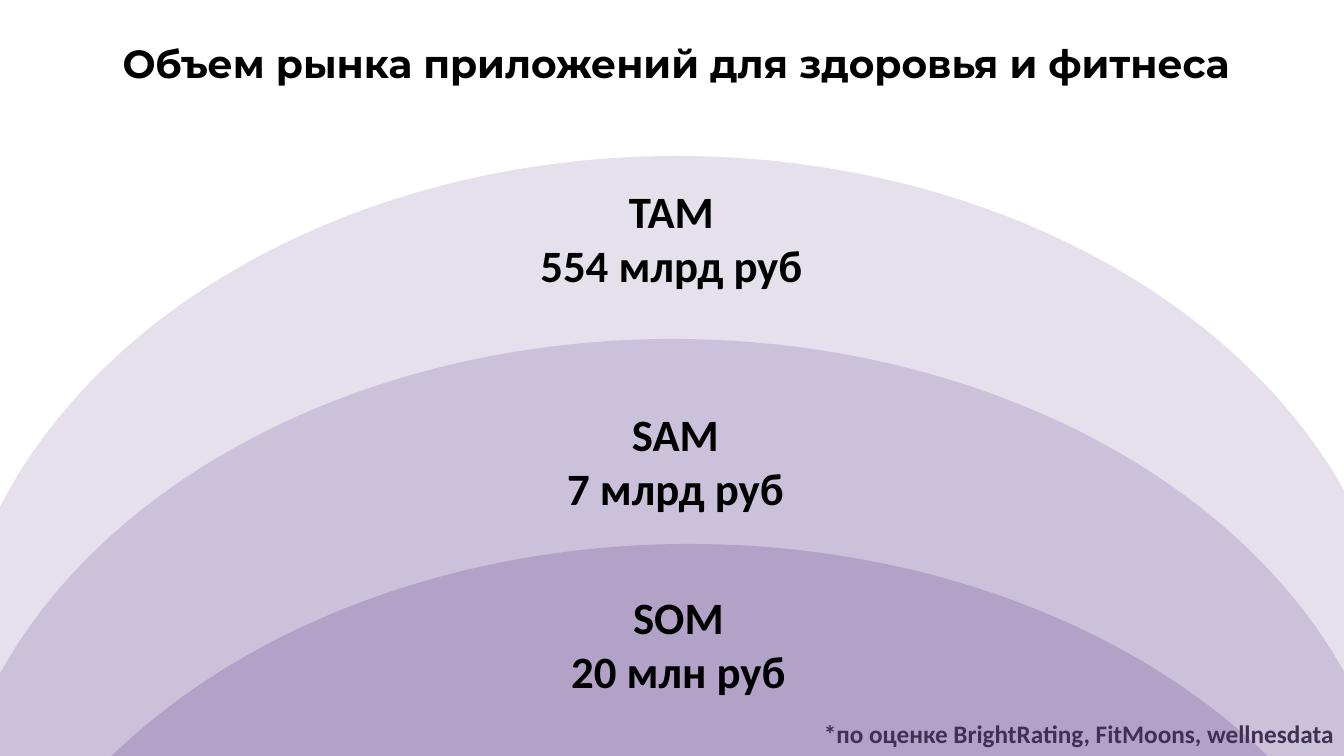
"""Build the TAM / SAM / SOM market size slide."""
from dataclasses import dataclass

from pptx import Presentation, util as u
from pptx.dml.color import RGBColor
from pptx.enum import shapes, text

SLIDE = (1344, 756)
TITLE = ("Объем рынка приложений для здоровья и фитнеса", (71, 0, 1210, 126))
NOTE = ("*по оценке BrightRating, FitMoons, wellnesdata", (814, 713, 555, 40))
MARKETS = [
    {"lines": ["TAM", "554 млрд руб"], "fill": "tam",
     "ellipse": (-50, 156, 1453, 1104), "label": (529, 179, 285, 119)},
    {"lines": ["SAM", "7 млрд руб"], "fill": "sam",
     "ellipse": (-54, 339, 1453, 1076), "label": (340, 402, 671, 119)},
    {"lines": ["SOM", "20 млн руб"], "fill": "som",
     "ellipse": (-37, 544, 1453, 1076), "label": (343, 585, 671, 119)},
]


@dataclass(frozen=True)
class Theme:
    """Fonts, type sizes and colours."""
    heading: str = "Montserrat"
    body: str = "Calibri"
    title_size: int = 28
    label_size: int = 32
    note_size: int = 18
    ink: str = "000000"
    note: str = "403152"
    tam: str = "E6E0EC"
    sam: str = "CCC1DA"
    som: str = "B3A2C7"


THEME = Theme()


def emu(box):
    """Turn px lengths into EMU."""
    return [u.Emu(round(px * 914400 / 100.8)) for px in box]


def add_ellipse(s, box, color):
    """Add a plain filled ellipse."""
    sp = s.shapes.add_shape(shapes.MSO_SHAPE.OVAL, *emu(box))
    sp.shadow.inherit = False
    sp.fill.solid()
    sp.fill.fore_color.rgb = RGBColor.from_string(color)
    sp.line.fill.background()


def add_text(s, box, lines, size, font=THEME.body, color=THEME.ink,
             align=text.PP_ALIGN.CENTER, anchor=text.MSO_ANCHOR.TOP):
    """Add a bold text box with one paragraph per line."""
    tf = s.shapes.add_textbox(*emu(box)).text_frame
    tf.word_wrap = True
    tf.vertical_anchor = anchor
    for i, line in enumerate(lines):
        p = tf.add_paragraph() if i else tf.paragraphs[0]
        p.alignment = align
        r = p.add_run()
        r.text = line
        r.font.name = font
        r.font.size = u.Pt(size)
        r.font.bold = True
        r.font.color.rgb = RGBColor.from_string(color)


def main():
    """Compose and save the slide."""
    prs = Presentation()
    prs.slide_width, prs.slide_height = emu(SLIDE)
    s = prs.slides.add_slide(prs.slide_layouts[6])

    title, title_box = TITLE
    add_text(s, title_box, [title], THEME.title_size, font=THEME.heading,
             anchor=text.MSO_ANCHOR.MIDDLE)
    for market in MARKETS:
        add_ellipse(s, market["ellipse"], getattr(THEME, market["fill"]))
        add_text(s, market["label"], market["lines"], THEME.label_size)
    note, note_box = NOTE
    add_text(s, note_box, [note], THEME.note_size, color=THEME.note,
             align=text.PP_ALIGN.LEFT)
    prs.save("out.pptx")


if __name__ == "__main__":
    main()
